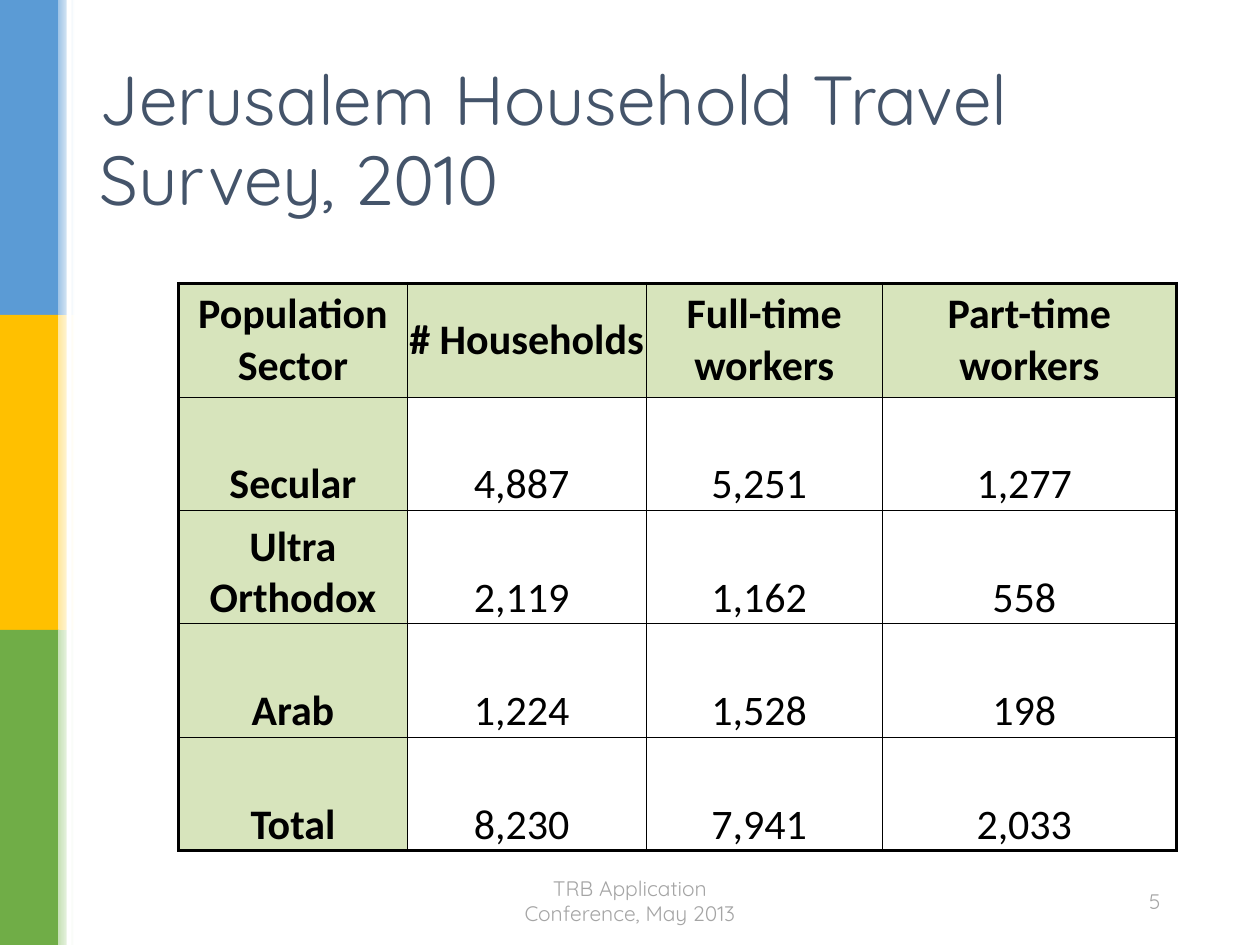
import itertools

import lxml.etree
import pptx
import pptx.dml.color
import pptx.enum.shapes
import pptx.enum.text
import pptx.oxml.ns
import pptx.util

Inches = pptx.util.Inches
ALIGN = pptx.enum.text.PP_ALIGN
ANCHOR = pptx.enum.text.MSO_ANCHOR

TITLE = "Jerusalem Household Travel Survey, 2010"
FOOTER = "TRB Application Conference, May 2013"
SLIDE_NUMBER = "5"
SURVEY = [
    ("Population Sector", "# Households", "Full-time workers", "Part-time workers"),
    ("Secular", "4,887", "5,251", "1,277"),
    ("Ultra Orthodox", "2,119", "1,162", "558"),
    ("Arab", "1,224", "1,528", "198"),
    ("Total", "8,230", "7,941", "2,033"),
]
COLUMN_WIDTHS = (1.81, 1.9, 1.87, 2.34)
ROW_HEIGHT = 0.9
# Line widths in points, from the first outer edge to the last
COLUMN_RULES = (2, 0.5, 1, 0.5, 2)
ROW_RULES = (2, 0.5, 0.5, 0.5, 0.5, 2)

THEME = {
    "bands": [("5B9BD5", "9DC3E6"), ("FFC000", "FFE699"), ("70AD47", "C5E0B4")],
    "white": "FFFFFF",
    "heading": "44546A",
    "text": "000000",
    "muted": "A5A5A5",
    "header_fill": "D7E4BC",
    "title_font": "Quicksand",
    "table_font": "Calibri",
    "title_size": 39.6,
    "table_size": 24,
    "footer_size": 12,
}


def rgb(value):
    return pptx.dml.color.RGBColor.from_string(value)


def write(text_frame, text, font, size, color, alignment, bold=False):
    text_frame.word_wrap = True
    text_frame.text = text
    paragraph = text_frame.paragraphs[0]
    paragraph.alignment = alignment
    run_font = paragraph.runs[0].font
    run_font.name = font
    run_font.size = pptx.util.Pt(size)
    run_font.bold = bold
    run_font.color.rgb = rgb(color)


def add_strip(slide, left, top, width, height, color, fade_to=None):
    strip = slide.shapes.add_shape(
        pptx.enum.shapes.MSO_SHAPE.RECTANGLE,
        Inches(left), Inches(top), Inches(width), Inches(height))
    strip.shadow.inherit = False
    strip.line.fill.background()
    if fade_to:
        strip.fill.gradient()
        strip.fill.gradient_angle = 0
        for stop, stop_color in zip(strip.fill.gradient_stops, (color, fade_to)):
            stop.color.rgb = rgb(stop_color)
    else:
        strip.fill.solid()
        strip.fill.fore_color.rgb = rgb(color)


def add_side_bands(slide):
    band_height = 7.5 / len(THEME["bands"])
    for index, (color, tint) in enumerate(THEME["bands"]):
        top = index * band_height
        add_strip(slide, 0, top, 0.47, band_height, color)
        add_strip(slide, 0.46, top, 0.13, band_height, tint, THEME["white"])
    add_strip(slide, 0.53, 0, 0.04, 7.5, THEME["white"])


def set_borders(cell, widths):
    """Draw the left, right, top and bottom borders, widths in points."""
    properties = cell._tc.get_or_add_tcPr()
    qn = pptx.oxml.ns.qn
    for position, (side, width) in enumerate(zip(("lnL", "lnR", "lnT", "lnB"), widths)):
        line = lxml.etree.Element(qn("a:" + side), w=str(int(pptx.util.Pt(width))))
        fill = lxml.etree.SubElement(line, qn("a:solidFill"))
        lxml.etree.SubElement(fill, qn("a:srgbClr"), val=THEME["text"])
        properties.insert(position, line)


def add_survey_table(slide):
    row_count, column_count = len(SURVEY), len(COLUMN_WIDTHS)
    table = slide.shapes.add_table(
        row_count, column_count, Inches(1.42), Inches(2.25),
        Inches(sum(COLUMN_WIDTHS)), Inches(ROW_HEIGHT * row_count)).table
    table.horz_banding = False
    for column, width in zip(table.columns, COLUMN_WIDTHS):
        column.width = Inches(width)
    for row in table.rows:
        row.height = Inches(ROW_HEIGHT)

    for row, column in itertools.product(range(row_count), range(column_count)):
        cell = table.cell(row, column)
        is_header = row == 0 or column == 0
        cell.margin_left = cell.margin_top = cell.margin_bottom = 0
        cell.margin_right = 0 if is_header else Inches(0.08)
        cell.vertical_anchor = ANCHOR.MIDDLE if row == 0 else ANCHOR.BOTTOM
        write(cell.text_frame, SURVEY[row][column], THEME["table_font"],
              THEME["table_size"], THEME["text"], ALIGN.CENTER, is_header)
        if is_header:
            cell.fill.solid()
            cell.fill.fore_color.rgb = rgb(THEME["header_fill"])
        else:
            cell.fill.background()
        set_borders(cell, COLUMN_RULES[column:column + 2] + ROW_RULES[row:row + 2])


def add_title(slide):
    title = slide.shapes.title
    title.left, title.top = Inches(0.69), Inches(0.4)
    title.width, title.height = Inches(8.62), Inches(1.45)
    write(title.text_frame, TITLE, THEME["title_font"], THEME["title_size"],
          THEME["heading"], ALIGN.LEFT)
    title.text_frame.vertical_anchor = ANCHOR.MIDDLE
    title.text_frame.paragraphs[0].line_spacing = 0.96


def add_footer_text(slide, text, left, width, alignment):
    box = slide.shapes.add_textbox(Inches(left), Inches(6.95), Inches(width), Inches(0.4))
    write(box.text_frame, text, THEME["title_font"], THEME["footer_size"],
          THEME["muted"], alignment)
    box.text_frame.vertical_anchor = ANCHOR.MIDDLE


def main():
    presentation = pptx.Presentation()
    presentation.slide_width, presentation.slide_height = Inches(10), Inches(7.5)
    slide = presentation.slides.add_slide(presentation.slide_layouts[5])
    add_side_bands(slide)
    add_survey_table(slide)
    add_title(slide)
    add_footer_text(slide, SLIDE_NUMBER, 6.62, 2.69, ALIGN.RIGHT)
    add_footer_text(slide, FOOTER, 3.81, 2.38, ALIGN.CENTER)
    presentation.save("out.pptx")


if __name__ == "__main__":
    main()
